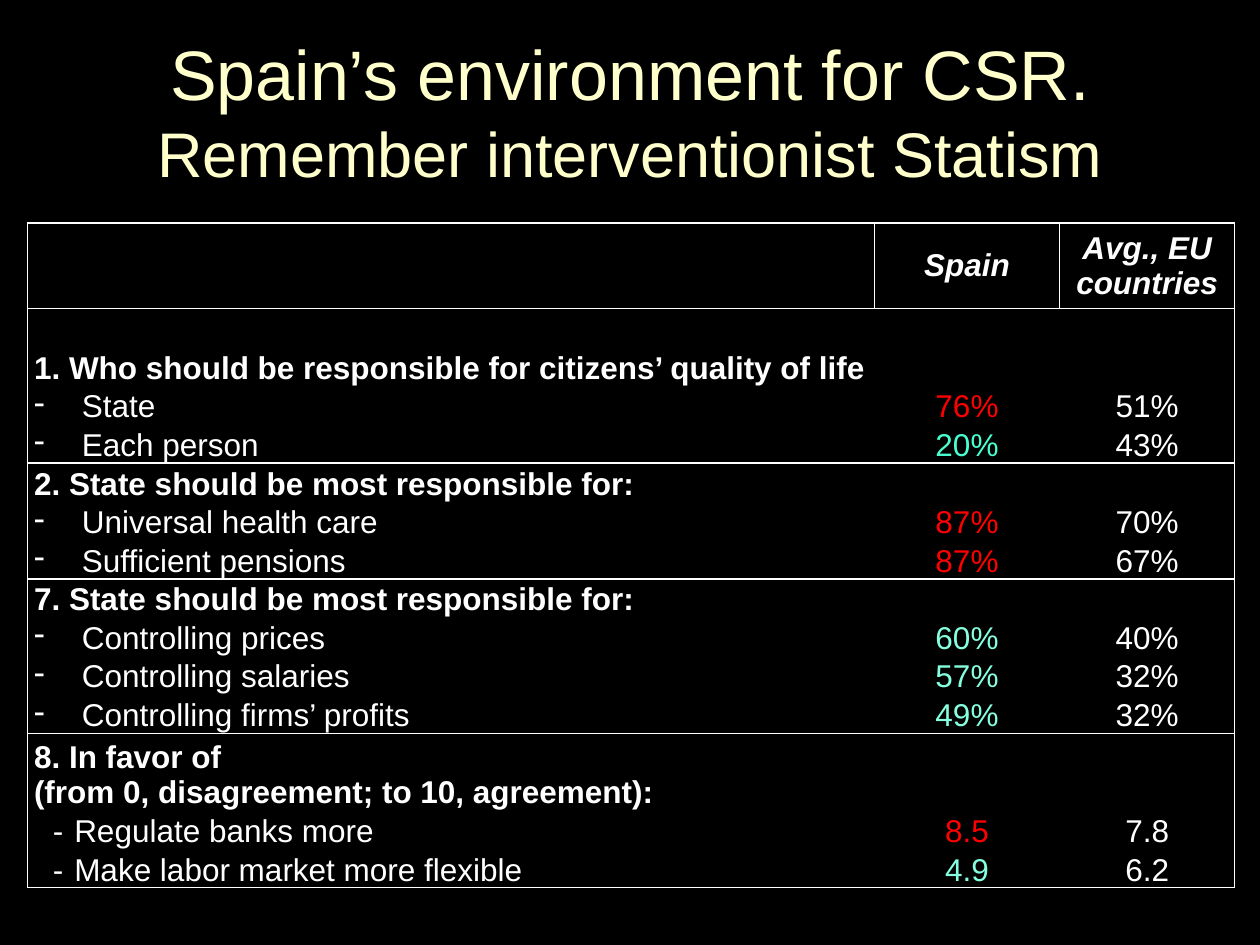
from lxml.etree import SubElement
from pptx import Presentation
from pptx.dml.color import RGBColor
from pptx.enum.text import MSO_ANCHOR as Anchor, PP_ALIGN as Align
from pptx.oxml.ns import qn
from pptx.util import Inches, Pt

COLORS = {
    "background": "000000",
    "title": "FFFFCC",
    "text": "FFFFFF",
    "red": "FF0000",
    "green": "47FFD1",
    "mint": "85FFE0",
}
TITLE_BOX = (0.75, 0.25, 8.5, 1.25)
TABLE_BOX = (0.22, 1.77, 9.58, 5.28)
COLUMN_WIDTHS = (6.72, 1.47, 1.39)
HEADER_HEIGHT = 0.68
HEADERS = ("", "Spain", "Avg., EU countries")
DASH_INDENT = (0.38, -0.38, True)
TAB_INDENT = (0.25, -0.1, False)
GROUPS = [
    ("1. Who should be responsible for citizens’ quality of life", 2, DASH_INDENT, [
        ("State", "76%", "red", "51%"),
        ("Each person", "20%", "green", "43%"),
    ]),
    ("2. State should be most responsible for:", 1, DASH_INDENT, [
        ("Universal health care", "87%", "red", "70%"),
        ("Sufficient pensions", "87%", "red", "67%"),
    ]),
    ("7. State should be most responsible for:", 1, DASH_INDENT, [
        ("Controlling prices", "60%", "mint", "40%"),
        ("Controlling salaries", "57%", "mint", "32%"),
        ("Controlling firms’ profits", "49%", "mint", "32%"),
    ]),
    ("8. In favor of \v(from 0, disagreement; to 10, agreement):", 2, TAB_INDENT, [
        ("-\t Regulate banks more", "8.5", "red", "7.8"),
        ("-\t Make labor market more flexible", "4.9", "mint", "6.2"),
    ]),
]


def set_values(target, values):
    for name, value in values.items():
        setattr(target, name, value)


def format_font(font, color, **values):
    set_values(font, {"name": "Arial", **values})
    font.color.rgb = RGBColor.from_string(COLORS[color])


def set_borders(cell, sides):
    properties = cell._tc.get_or_add_tcPr()
    for side in "LRTB":
        line = SubElement(properties, qn(f"a:ln{side}"), w=str(Pt(1)))
        if side in sides:
            fill = SubElement(line, qn("a:solidFill"))
            SubElement(fill, qn("a:srgbClr"), val=COLORS["text"])
        else:
            SubElement(line, qn("a:noFill"))


def set_indent(paragraph, left, first, bullet):
    properties = paragraph._p.get_or_add_pPr()
    properties.set("marL", str(Inches(left)))
    properties.set("indent", str(Inches(first)))
    if bullet:
        SubElement(properties, qn("a:buChar"), char="-")


def fill_cell(cell, text, sides, margin=0.05, anchor=Anchor.BOTTOM,
              align=Align.CENTER, color="text", indent=None, **font):
    set_borders(cell, sides)
    cell.fill.solid()
    cell.fill.fore_color.rgb = RGBColor.from_string(COLORS["background"])
    set_values(cell, {
        "vertical_anchor": anchor, "margin_top": 0, "margin_bottom": 0,
        "margin_left": Inches(margin), "margin_right": Inches(margin),
    })
    paragraph = cell.text_frame.paragraphs[0]
    paragraph.text = text
    paragraph.alignment = align
    format_font(paragraph.font, "text", size=Pt(18))
    for run in paragraph.runs:
        format_font(run.font, color, size=Pt(18), **font)
    if indent:
        set_indent(paragraph, *indent)


def add_title(slide, box):
    title = slide.shapes.title
    set_values(title, dict(zip(("left", "top", "width", "height"), map(Inches, box))))
    title.text_frame.vertical_anchor = Anchor.MIDDLE
    paragraph = title.text_frame.paragraphs[0]
    paragraph.alignment = Align.CENTER
    first = paragraph.add_run()
    first.text = "Spain’s environment for CSR."
    paragraph.add_line_break()
    second = paragraph.add_run()
    second.text = "Remember interventionist Statism"
    for run, size in ((first, 40), (second, 36)):
        format_font(run.font, "title", size=Pt(size))


def add_survey_table(slide, box):
    lines = [span for _, first, _, items in GROUPS for span in [first] + [1] * len(items)]
    line_height = (box[3] - HEADER_HEIGHT) / sum(lines)
    heights = [HEADER_HEIGHT] + [span * line_height for span in lines]
    frame = slide.shapes.add_table(len(heights), len(COLUMN_WIDTHS), *map(Inches, box))
    table = frame.table
    table.horz_banding = False
    for column, width in zip(table.columns, COLUMN_WIDTHS):
        column.width = Inches(width)
    for row, height in zip(table.rows, heights):
        row.height = Inches(height)

    for cell, text in zip(table.rows[0].cells, HEADERS):
        fill_cell(cell, text, "LRTB", margin=0.02, anchor=Anchor.MIDDLE, bold=True, italic=True)
    rows = iter(list(table.rows)[1:])
    for heading, _, indent, items in GROUPS:
        label, spain, europe = next(rows).cells
        fill_cell(label, heading, "LT", align=Align.LEFT, bold=True)
        fill_cell(spain, "", "T")
        fill_cell(europe, "", "TR")
        for item in items:
            name, spain_value, color, europe_value = item
            bottom = "B" if item is items[-1] else ""
            label, spain, europe = next(rows).cells
            fill_cell(label, name, "L" + bottom, align=Align.LEFT, indent=indent, bold=False)
            fill_cell(spain, spain_value, bottom, color=color, bold=False)
            fill_cell(europe, europe_value, "R" + bottom, bold=False)


def main():
    presentation = Presentation()
    set_values(presentation, {"slide_width": Inches(10), "slide_height": Inches(7.5)})
    slide = presentation.slides.add_slide(presentation.slide_layouts[5])
    slide.background.fill.solid()
    slide.background.fill.fore_color.rgb = RGBColor.from_string(COLORS["background"])
    add_title(slide, TITLE_BOX)
    add_survey_table(slide, TABLE_BOX)
    presentation.save("out.pptx")


if __name__ == "__main__":
    main()
